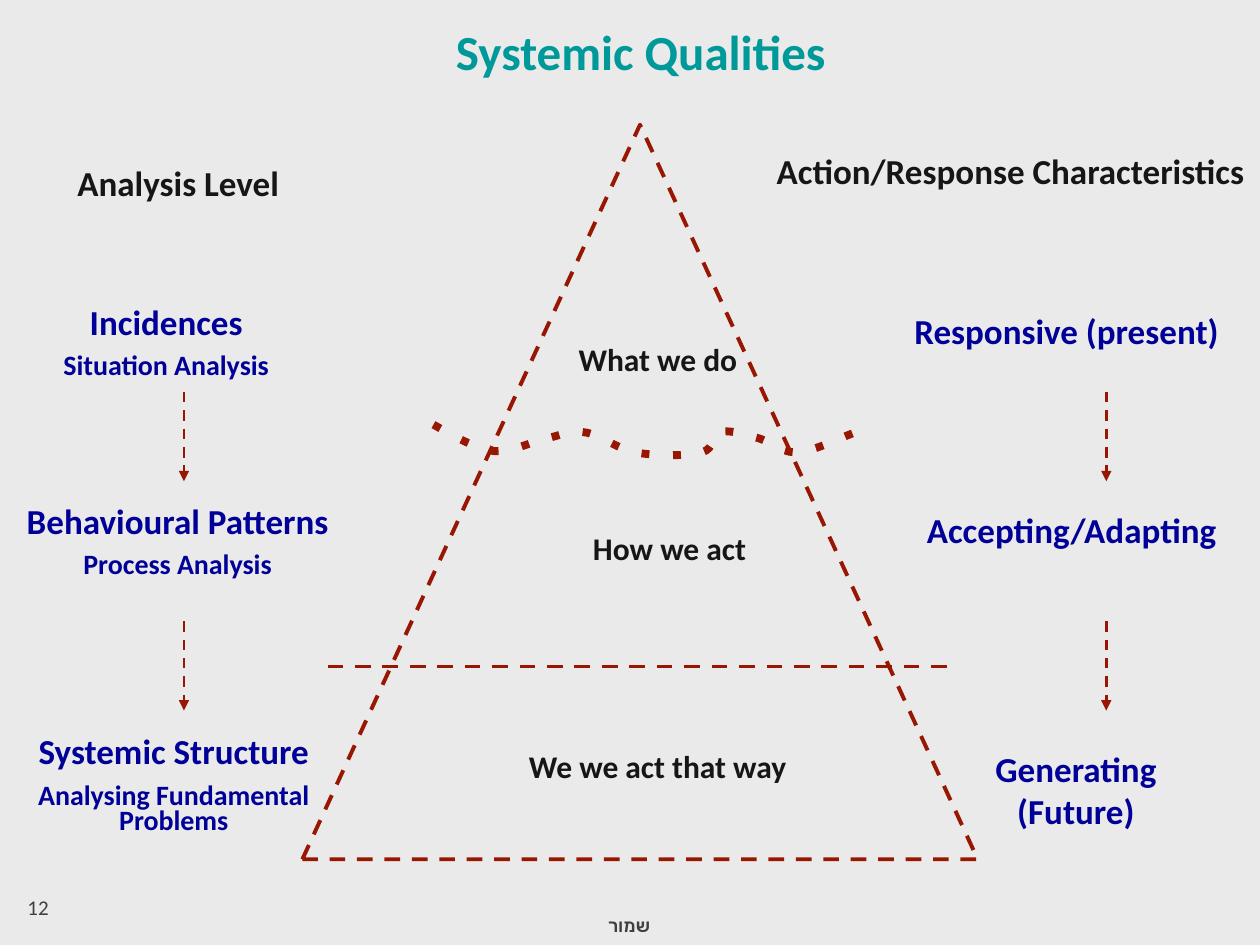
import pptx
import pptx.util
import pptx.dml.color
import pptx.enum.dml
import pptx.enum.shapes
import pptx.enum.text
import pptx.oxml.ns
import lxml.etree

Inches, Pt = pptx.util.Inches, pptx.util.Pt
RGBColor = pptx.dml.color.RGBColor
Dash = pptx.enum.dml.MSO_LINE
Align = pptx.enum.text.PP_ALIGN
qn = pptx.oxml.ns.qn

GREY = RGBColor(0xEA, 0xEA, 0xEA)
RED = RGBColor(0x98, 0x17, 0x02)
NAVY = RGBColor(0x00, 0x00, 0x99)
TEAL = RGBColor(0x00, 0x99, 0x99)
BLACK = RGBColor(0x16, 0x16, 0x16)
DARK = RGBColor(0x3F, 0x3F, 0x3F)

deck = pptx.Presentation()
deck.slide_width, deck.slide_height = Inches(10), Inches(7.5)
slide = deck.slides.add_slide(deck.slide_layouts[6])
slide.background.fill.solid()
slide.background.fill.fore_color.rgb = GREY
shapes = slide.shapes


def add_text(box, lines, color, align=Align.CENTER, bold=True, space=None):
    """Add a text box; lines holds (text, point size) for each paragraph."""
    frame = shapes.add_textbox(*map(Inches, box)).text_frame
    frame.word_wrap = True
    for i, (text, size) in enumerate(lines):
        para = frame.add_paragraph() if i else frame.paragraphs[0]
        para.text = text
        para.alignment = align
        para.line_spacing = space
        if i:
            para.space_before = Pt(8)
        font = para.font
        font.name, font.size, font.bold = "Calibri", Pt(size), bold
        font.color.rgb = color


def add_line(x1, y1, x2, y2, width, arrow=False):
    line = shapes.add_connector(
        pptx.enum.shapes.MSO_CONNECTOR.STRAIGHT,
        Inches(x1), Inches(y1), Inches(x2), Inches(y2))
    line.line.color.rgb = RED
    line.line.width = Pt(width)
    line.line.dash_style = Dash.DASH
    if arrow:
        lxml.etree.SubElement(line.line._get_or_add_ln(), qn("a:tailEnd"), type="triangle")
    lxml.etree.SubElement(line._element.spPr, qn("a:effectLst"))


# Pyramid, water line and lower divider
peak = shapes.add_shape(
    pptx.enum.shapes.MSO_SHAPE.ISOSCELES_TRIANGLE,
    Inches(2.4), Inches(0.99), Inches(5.36), Inches(5.83))
add_line(2.6, 5.29, 7.56, 5.29, 2.25)

# Three points for each curve: two controls and an end
points = [
    (3.6, 3.46), (3.77, 3.56), (3.92, 3.58),
    (4.06, 3.59), (4.21, 3.51), (4.33, 3.48),
    (4.45, 3.46), (4.51, 3.41), (4.63, 3.43),
    (4.75, 3.44), (4.89, 3.56), (5.04, 3.59),
    (5.2, 3.62), (5.46, 3.62), (5.57, 3.59),
    (5.68, 3.56), (5.64, 3.45), (5.71, 3.43),
    (5.78, 3.41), (5.89, 3.44), (5.99, 3.47),
    (6.1, 3.49), (6.19, 3.59), (6.31, 3.59),
    (6.44, 3.59), (6.66, 3.48), (6.74, 3.45),
    (6.82, 3.42), (6.81, 3.41), (6.8, 3.4),
]
pen = shapes.build_freeform(Inches(3.44), Inches(3.37))
pen.add_line_segments([(Inches(x), Inches(y)) for x, y in points], close=False)
wave = pen.convert_to_shape()

# Turn each three straight steps into one curve
steps = list(wave._element.iter(qn("a:lnTo")))
for i in range(0, len(steps), 3):
    curve = lxml.etree.Element(qn("a:cubicBezTo"))
    steps[i].addprevious(curve)
    for step in steps[i:i + 3]:
        curve.append(step[0])
        step.getparent().remove(step)

for shape, width, dash in [(peak, 2.25, Dash.DASH), (wave, 4.5, Dash.ROUND_DOT)]:
    shape.shadow.inherit = False
    shape.fill.background()
    shape.line.color.rgb = RED
    shape.line.width = Pt(width)
    shape.line.dash_style = dash
# Square dots
wave.line._get_or_add_ln().find(qn("a:prstDash")).set("val", "dot")

# Arrows between the levels on both sides
for x in (1.46, 8.78):
    for y in (3.11, 4.93):
        add_line(x, y, x, y + 0.71, 1.5, arrow=True)

# Title and column heads
add_text((2.27, 0.12, 5.63, 0.57), [("Systemic Qualities", 28)], TEAL)
add_text((0.43, 1.23, 1.97, 0.77), [("Analysis Level", 20)], BLACK)
add_text((6.01, 1.14, 4.02, 0.77), [("Action/Response Characteristics", 20)], BLACK)

# Left column
for box, head, note in [
    ((0.1, 2.41, 2.44, 0.69), "Incidences", "Situation Analysis"),
    ((-0.01, 3.99, 2.84, 0.95), "Behavioural Patterns", "Process Analysis"),
    ((0.2, 5.82, 2.36, 1.35), "Systemic Structure", "Analysing Fundamental Problems"),
]:
    add_text(box, [(head, 20), (note, 16)], NAVY, space=0.75)

# Pyramid levels
for box, text in [
    ((3.98, 2.65, 1.97, 0.4), "What we do"),
    ((3.5, 4.15, 2.52, 0.4), "How we act"),
    ((3.35, 5.88, 2.99, 0.4), "We we act that way"),
]:
    add_text(box, [(text, 18)], BLACK, Align.RIGHT)

# Right column
for box, text in [
    ((6.93, 2.41, 3.07, 0.44), "Responsive (present)"),
    ((6.97, 3.99, 3.07, 0.43), "Accepting/Adapting"),
    ((7.36, 5.88, 2.36, 0.77), "Generating (Future)"),
]:
    add_text(box, [(text, 20)], NAVY)

# Footer
add_text((3.89, 7.21, 1.37, 0.4), [("שמור", 10)], DARK, Align.RIGHT)
add_text((0.12, 7.05, 2.33, 0.4), [("12", 12)], DARK, Align.LEFT, bold=False)

deck.save("out.pptx")
